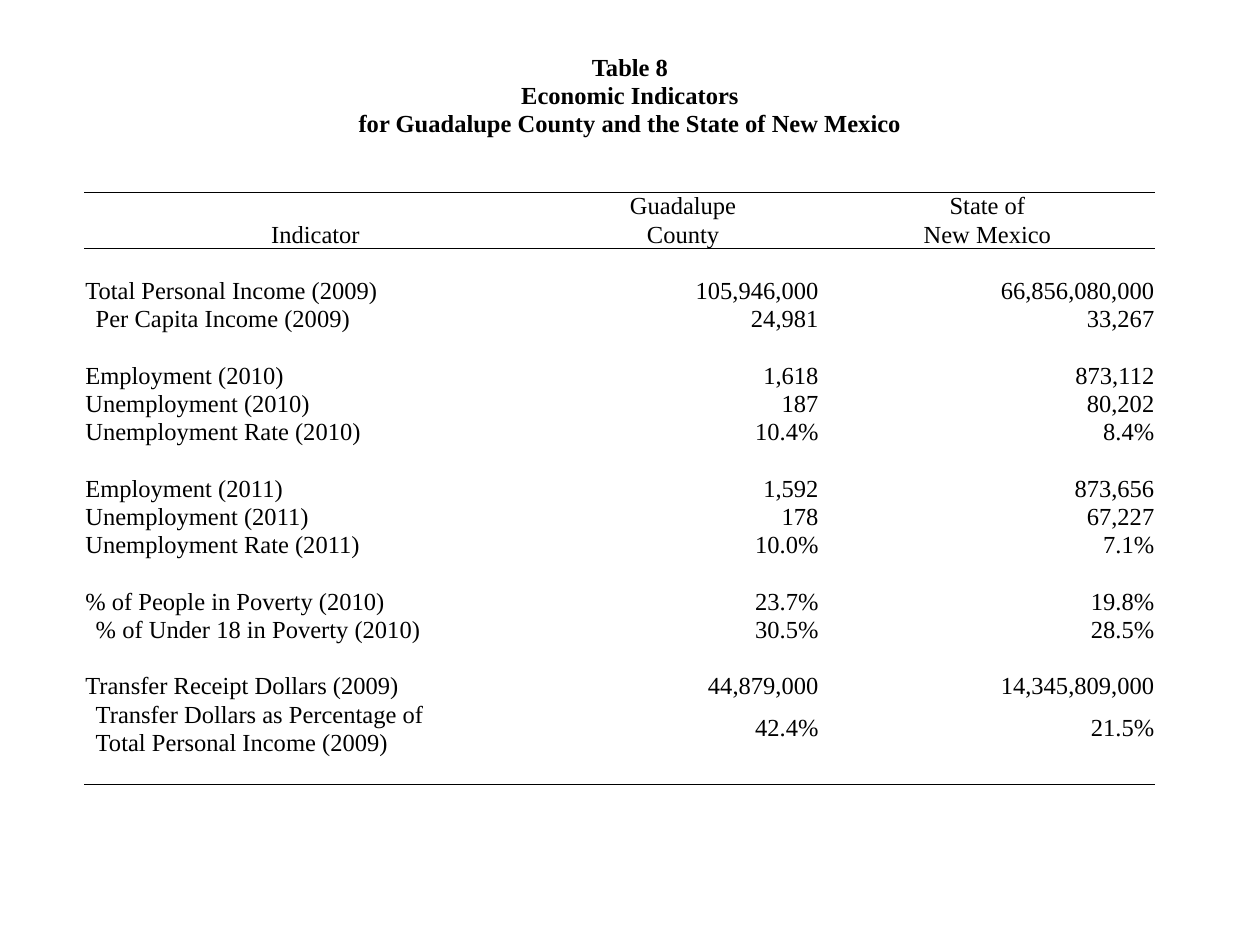
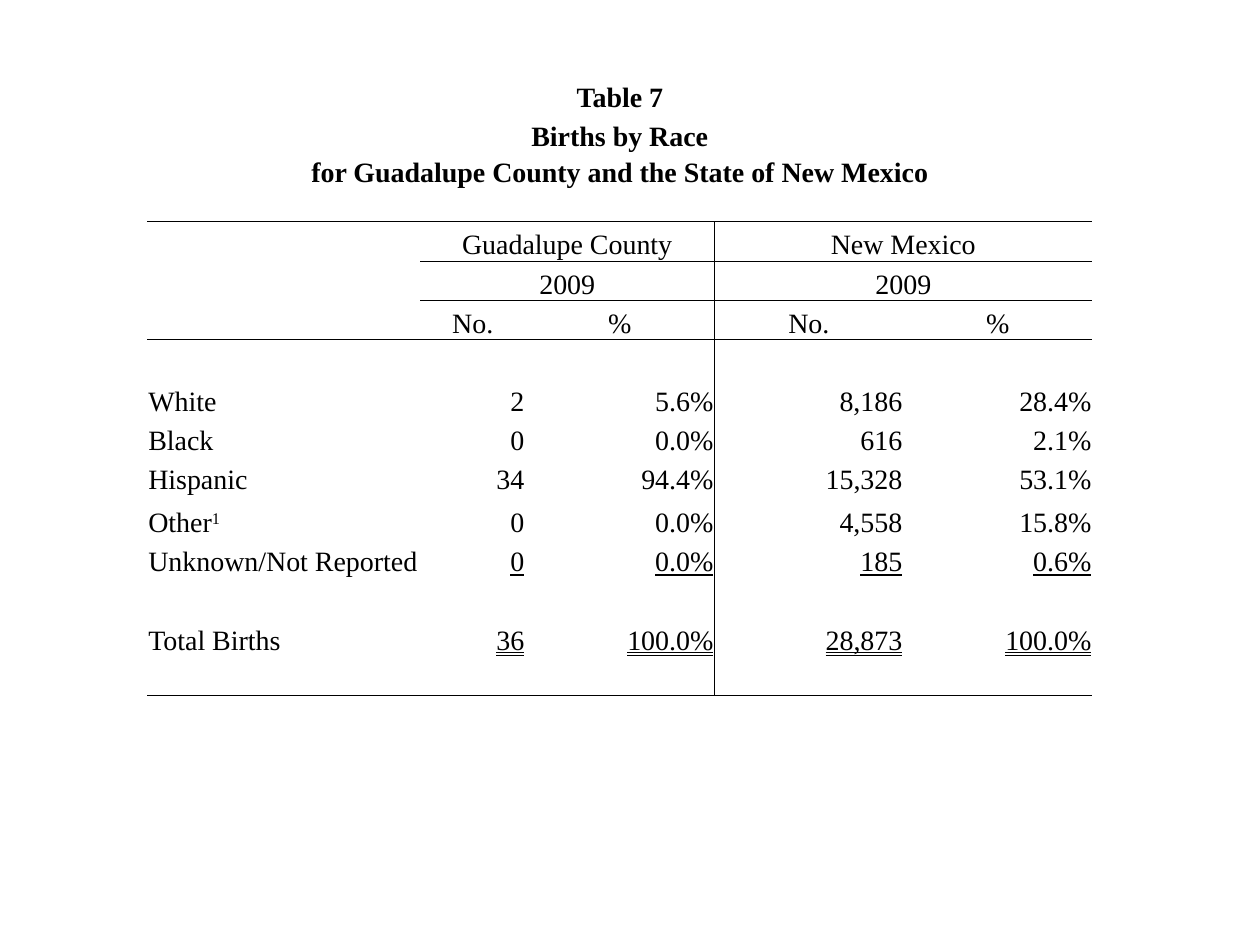
import dataclasses

import pptx
import pptx.dml.color
import pptx.enum.text
import pptx.util
from lxml import etree

Cm = pptx.util.Cm
Pt = pptx.util.Pt
Align = pptx.enum.text.PP_ALIGN
Anchor = pptx.enum.text.MSO_ANCHOR
Line = pptx.enum.text.MSO_UNDERLINE
SPACE = "{http://schemas.openxmlformats.org/drawingml/2006/main}"


@dataclasses.dataclass(frozen=True)
class Theme:
    ink: str = "000000"
    font: str = "Times New Roman"
    small: int = 14
    large: int = 16
    rule: float = 0.5
    plain: str = "{2D5ABB26-0587-4C30-8999-92F81FD0307C}"  # no style, no grid


class Deck:
    def __init__(self, theme):
        self.theme = theme
        self.show = pptx.Presentation()
        self.show.slide_width, self.show.slide_height = Cm(25.4), Cm(19.05)

    def page(self, size):
        self.size = size
        self.slide = self.show.slides.add_slide(self.show.slide_layouts[6])

    def table(self, rows, left, top, widths, heights, heads, sides, bold=0):
        """Centre the first heads rows, embolden the first bold rows.

        sides(row, col) names the ruled edges of a cell.
        """
        grid = self.slide.shapes.add_table(
            len(rows), len(widths), Cm(left), Cm(top),
            Cm(sum(widths)), Cm(sum(heights))).table
        grid.first_row = grid.horz_banding = False
        grid._tbl.tblPr[0].text = self.theme.plain
        for col, width in zip(grid.columns, widths):
            col.width = Cm(width)
        for r, row in enumerate(rows):
            grid.rows[r].height = Cm(heights[r])
            for c in range(len(widths)):
                cell = grid.cell(r, c)
                side = Align.CENTER if r < heads else Align.RIGHT if c else Align.LEFT
                self.fill(cell, row[c] if c < len(row) else "", side, r < bold)
                # A rule below a cell is also the rule above the next one
                above = "T" if r and "B" in sides(r - 1, c) else ""
                self.edge(cell, sides(r, c) + above)
        return grid

    def fill(self, cell, text, side, bold):
        cell.fill.background()
        cell.vertical_anchor = Anchor.BOTTOM
        cell.margin_left = cell.margin_right = Cm(0.02)
        cell.margin_top = cell.margin_bottom = 0
        para = cell.text_frame.paragraphs[0]
        para.alignment = side
        if not text:  # keeps an empty row as low as the others
            end = para._p.get_or_add_endParaRPr()
            end.set("sz", str(self.size * 100))
            etree.SubElement(end, SPACE + "latin", typeface=self.theme.font)
            return
        # A caret marks a raised note number
        word, _, note = text.partition("^")
        para.text = word
        if note:
            raised = para.add_run()
            raised.text = note
            raised._r.get_or_add_rPr().set("baseline", "30000")
        for run in para.runs:
            font = run.font
            font.name, font.size, font.bold = self.theme.font, Pt(self.size), bold
            font.color.rgb = pptx.dml.color.RGBColor.from_string(self.theme.ink)

    def edge(self, cell, sides):
        props = cell._tc.get_or_add_tcPr()
        for spot, side in enumerate("LRTB"):
            line = etree.Element(SPACE + "ln" + side, w=str(Pt(self.theme.rule)))
            if side in sides:
                paint = etree.SubElement(line, SPACE + "solidFill")
                etree.SubElement(paint, SPACE + "srgbClr", val=self.theme.ink)
            else:
                etree.SubElement(line, SPACE + "noFill")
            props.insert(spot, line)

    def span(self, grid, row, col, down=1, across=1):
        grid.cell(row, col).merge(grid.cell(row + down - 1, col + across - 1))

    def score(self, grid, row, kind):
        """Underline the figures of one row."""
        for cell in list(grid.rows[row].cells)[1:]:
            cell.text_frame.paragraphs[0].runs[0].font.underline = kind


PLACE = "for Guadalupe County and the State of New Mexico"


def income(deck):
    title = [("Table 8",), ("Economic Indicators",), (PLACE,), ()]
    rows = [
        ("", "Guadalupe", "State of"),
        ("Indicator", "County", "New Mexico"),
        (),
        ("Total Personal Income (2009)", "105,946,000", "66,856,080,000"),
        ("Per Capita Income (2009)", "24,981", "33,267"),
        (),
        ("Employment (2010)", "1,618", "873,112"),
        ("Unemployment (2010)", "187", "80,202"),
        ("Unemployment Rate (2010)", "10.4%", "8.4%"),
        (),
        ("Employment (2011)", "1,592", "873,656"),
        ("Unemployment (2011)", "178", "67,227"),
        ("Unemployment Rate (2011)", "10.0%", "7.1%"),
        (),
        ("% of People in Poverty (2010)", "23.7%", "19.8%"),
        ("% of Under 18 in Poverty (2010)", "30.5%", "28.5%"),
        (),
        ("Transfer Receipt Dollars (2009)", "44,879,000", "14,345,809,000"),
        ("Transfer Dollars as Percentage of", "42.4%", "21.5%"),
        ("Total Personal Income (2009)",),
        (),
    ]
    last = len(rows) - 1

    def sides(r, c):
        return "T" if r == 0 else "B" if r in (1, last) else ""

    # Title lines across four columns
    deck.page(deck.theme.small)
    head = deck.table(title, 4.23, 1.07, (5.05, 2.82, 6.07, 3), [0.57] * len(title),
                      3, lambda r, c: "", bold=3)
    for r in range(3):
        deck.span(head, r, 0, across=4)

    grid = deck.table(rows, 1.7, 3.87, (9.32, 5.5, 6.77), [0.57] * len(rows), 2, sides)

    # Indented labels, and the figures that span the last label's two lines
    for r in (4, 15, 18, 19):
        grid.cell(r, 0).margin_left = Cm(0.23)
    for c in (1, 2):
        deck.span(grid, 18, c, down=2)
        grid.cell(18, c).vertical_anchor = Anchor.MIDDLE


def births(deck):
    rows = [
        ("Table 7",),
        ("Births by Race",),
        (PLACE,),
        (),
        ("", "Guadalupe County", "", "New Mexico"),
        ("", "2009", "", "2009"),
        ("", "No.", "%", "No.", "%"),
        (),
        ("White", "2", "5.6%", "8,186", "28.4%"),
        ("Black", "0", "0.0%", "616", "2.1%"),
        ("Hispanic", "34", "94.4%", "15,328", "53.1%"),
        ("Other^1", "0", "0.0%", "4,558", "15.8%"),
        ("Unknown/Not Reported", "0", "0.0%", "185", "0.6%"),
        (),
        ("Total Births", "36", "100.0%", "28,873", "100.0%"),
        (),
        (),
    ]
    foot = len(rows) - 2
    heights = [0.79] * len(rows)
    heights[2], heights[3], heights[11] = 0.74, 0.66, 0.86

    def sides(r, c):
        under = "B" if r in (3, 6, foot) or (r in (4, 5) and c) else ""
        if not 4 <= r <= foot:
            return under
        if c == 3:
            return "L" + under
        return "R" + under if c == 2 or (c == 1 and r < 6) else under

    deck.page(deck.theme.large)
    grid = deck.table(rows, 2.97, 1.49, (5.5, 2.12, 3.81, 3.81, 3.81), heights,
                      7, sides, bold=3)

    # Title lines span the table; area and year span number and percent
    for r in range(3):
        deck.span(grid, r, 0, across=5)
    for r in (4, 5):
        for c in (1, 3):
            deck.span(grid, r, c, across=2)
    deck.score(grid, 12, Line.SINGLE_LINE)
    deck.score(grid, 14, Line.DOUBLE_LINE)


def main():
    deck = Deck(Theme())
    income(deck)
    births(deck)
    deck.show.save("out.pptx")


if __name__ == "__main__":
    main()
